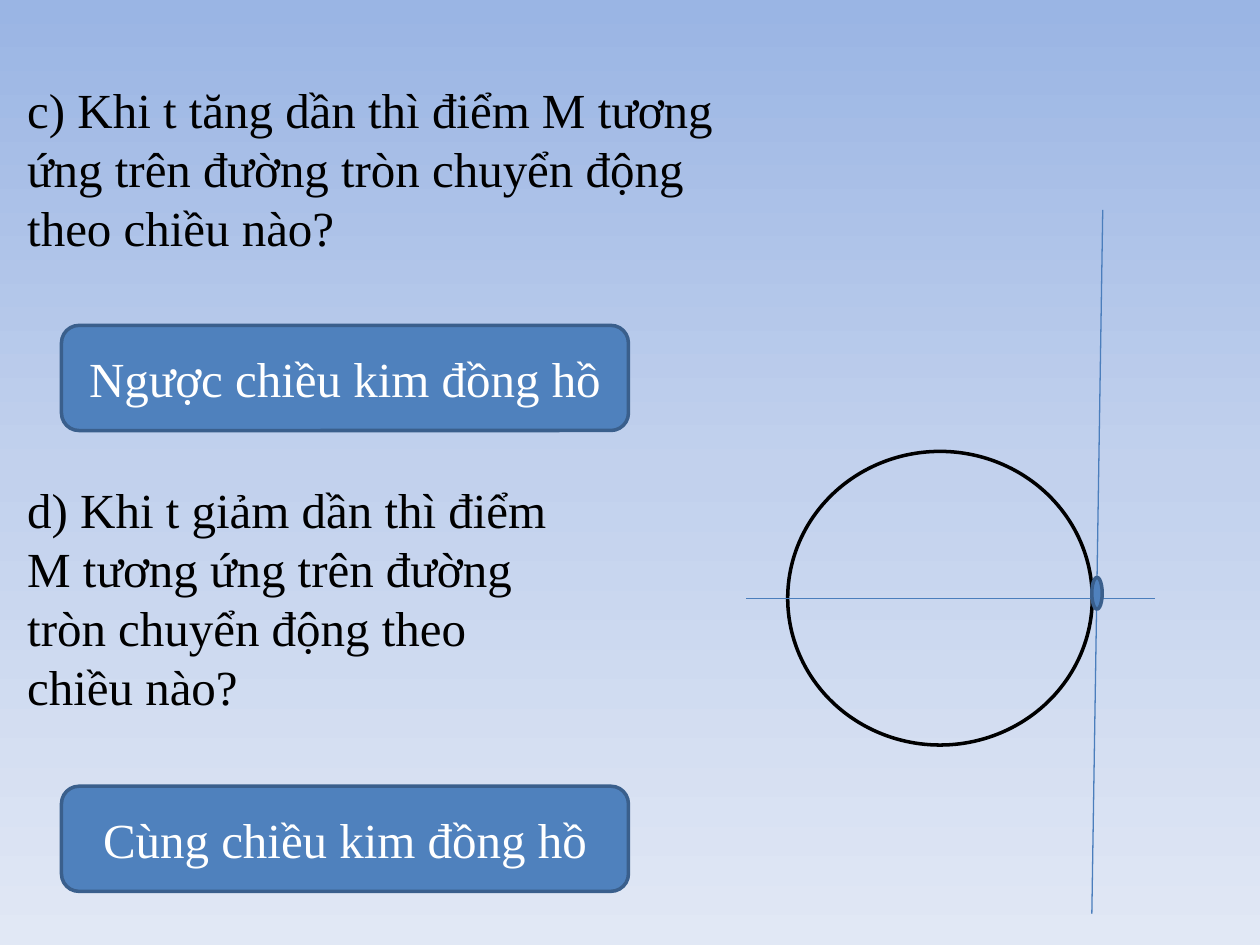
from copy import deepcopy

from pptx import Presentation
from pptx.dml.color import RGBColor
from pptx.enum.shapes import MSO_CONNECTOR, MSO_SHAPE
from pptx.enum.text import MSO_ANCHOR, MSO_AUTO_SIZE, PP_ALIGN
from pptx.oxml.ns import qn
from pptx.util import Cm, Pt
from lxml.etree import SubElement


def color(hex_string):
    return RGBColor.from_string(hex_string)


class SlideBuilder:
    """Holds the shared style and the slide being filled."""

    font = "Times New Roman"
    text_size = Pt(28)
    ink = "000000"
    light = "FFFFFF"
    accent = "4F81BD"
    outline = "3A5F8C"
    axis = "4B7EBC"

    def __init__(self, presentation):
        self.slide = presentation.slides.add_slide(presentation.slide_layouts[6])

    def background(self, *hex_strings):
        """Vertical gradient with evenly spaced colours, first one on top."""
        fill = self.slide.background.fill
        fill.gradient()
        fill.gradient_angle = 270
        stop_list = fill._fill._gradFill.find(qn("a:gsLst"))
        while len(stop_list) < len(hex_strings):
            stop_list.append(deepcopy(stop_list[0]))
        for index, (stop, hex_string) in enumerate(zip(fill.gradient_stops, hex_strings)):
            stop.color.rgb = color(hex_string)
            stop.position = index / (len(hex_strings) - 1)

    def add_text(self, text_frame, text, hex_string, alignment):
        text_frame.word_wrap = True
        paragraph = text_frame.paragraphs[0]
        paragraph.alignment = alignment
        run = paragraph.add_run()
        run.text = text
        run.font.name = self.font
        run.font.size = self.text_size
        run.font.color.rgb = color(hex_string)

    def question(self, text, left, top, width, height):
        box = self.slide.shapes.add_textbox(Cm(left), Cm(top), Cm(width), Cm(height))
        box.text_frame.auto_size = MSO_AUTO_SIZE.SHAPE_TO_FIT_TEXT
        self.add_text(box.text_frame, text, self.ink, PP_ALIGN.LEFT)

    def shape(self, kind, left, top, width, height, line, fill=None):
        shape = self.slide.shapes.add_shape(kind, Cm(left), Cm(top), Cm(width), Cm(height))
        shape.shadow.inherit = False
        shape.line.color.rgb = color(line)
        shape.line.width = Pt(2)
        if fill:
            shape.fill.solid()
            shape.fill.fore_color.rgb = color(fill)
        else:
            shape.fill.background()
        return shape

    def answer(self, text, left, top, width, height):
        shape = self.shape(MSO_SHAPE.ROUNDED_RECTANGLE, left, top, width, height,
                           self.outline, self.accent)
        shape.text_frame.vertical_anchor = MSO_ANCHOR.MIDDLE
        self.add_text(shape.text_frame, text, self.light, PP_ALIGN.CENTER)

    def circle(self, left, top, width, height, line, fill=None):
        self.shape(MSO_SHAPE.FLOWCHART_CONNECTOR, left, top, width, height, line, fill)

    def line(self, start_x, start_y, end_x, end_y):
        connector = self.slide.shapes.add_connector(
            MSO_CONNECTOR.STRAIGHT, Cm(start_x), Cm(start_y), Cm(end_x), Cm(end_y))
        connector.line.color.rgb = color(self.axis)
        connector.line.width = Pt(0.75)
        SubElement(connector._element.spPr, qn("a:effectLst"))


def main():
    presentation = Presentation()
    presentation.slide_width, presentation.slide_height = Cm(25.4), Cm(19.05)
    builder = SlideBuilder(presentation)
    builder.background("9AB5E4", "C2D1ED", "E1E8F5")

    builder.circle(15.88, 9.1, 6.14, 5.92, builder.ink)
    builder.line(22.23, 4.23, 22.01, 18.42)
    builder.line(23.28, 12.07, 15.03, 12.07)
    builder.circle(22.01, 11.64, 0.21, 0.64, builder.outline, builder.accent)

    builder.question("c) Khi t tăng dần thì điểm M tương ứng trên đường tròn "
                     "chuyển động theo chiều nào?", 0.3, 1.48, 15.67, 3.84)
    builder.answer("Ngược chiều kim đồng hồ", 1.24, 6.56, 11.43, 2.12)
    builder.question("d) Khi t giảm dần thì điểm M tương ứng trên đường tròn "
                     "chuyển động theo chiều nào?", 0.3, 9.55, 11.43, 5.05)
    builder.answer("Cùng chiều kim đồng hồ", 1.24, 15.85, 11.43, 2.12)

    presentation.save("out.pptx")


if __name__ == "__main__":
    main()
